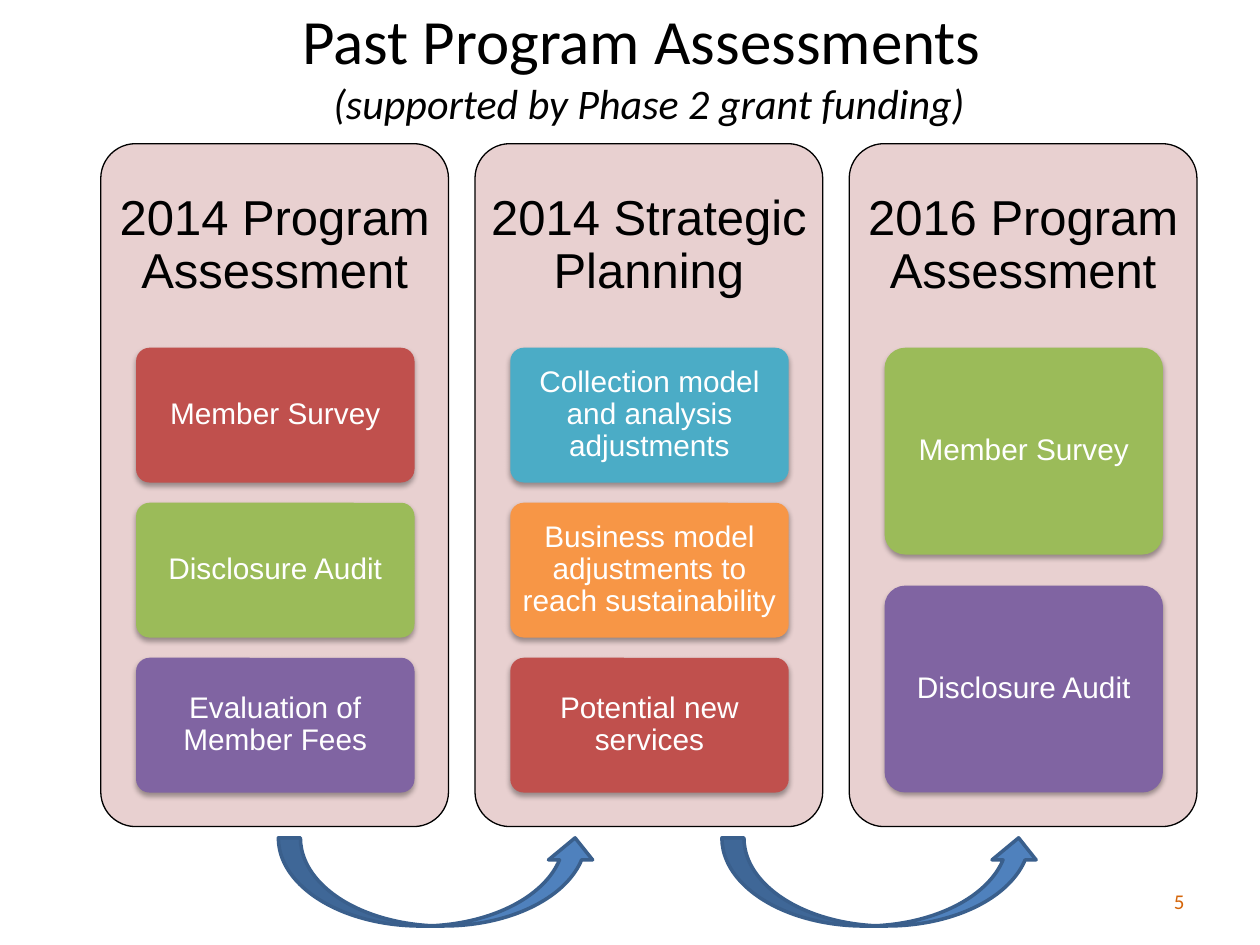
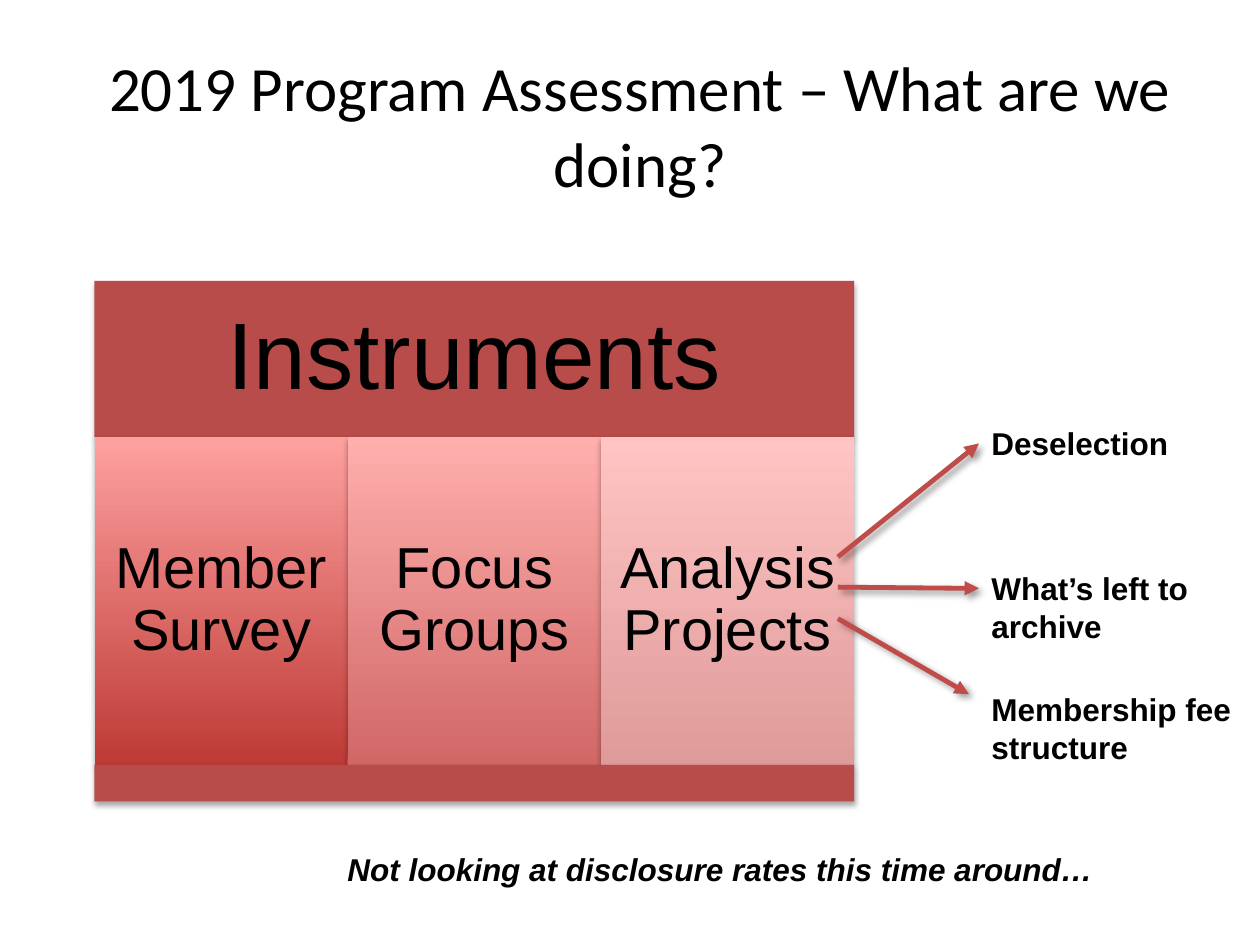
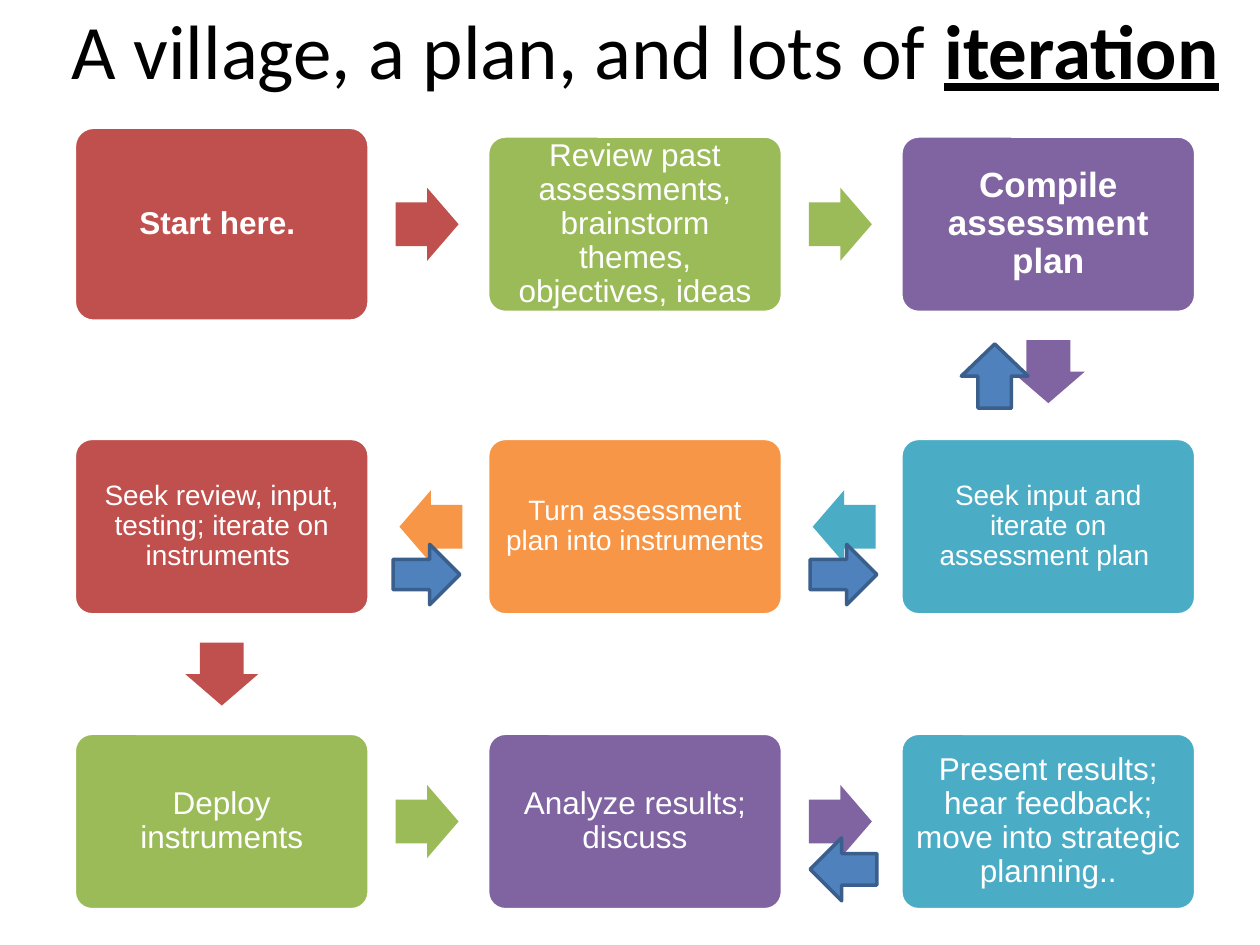
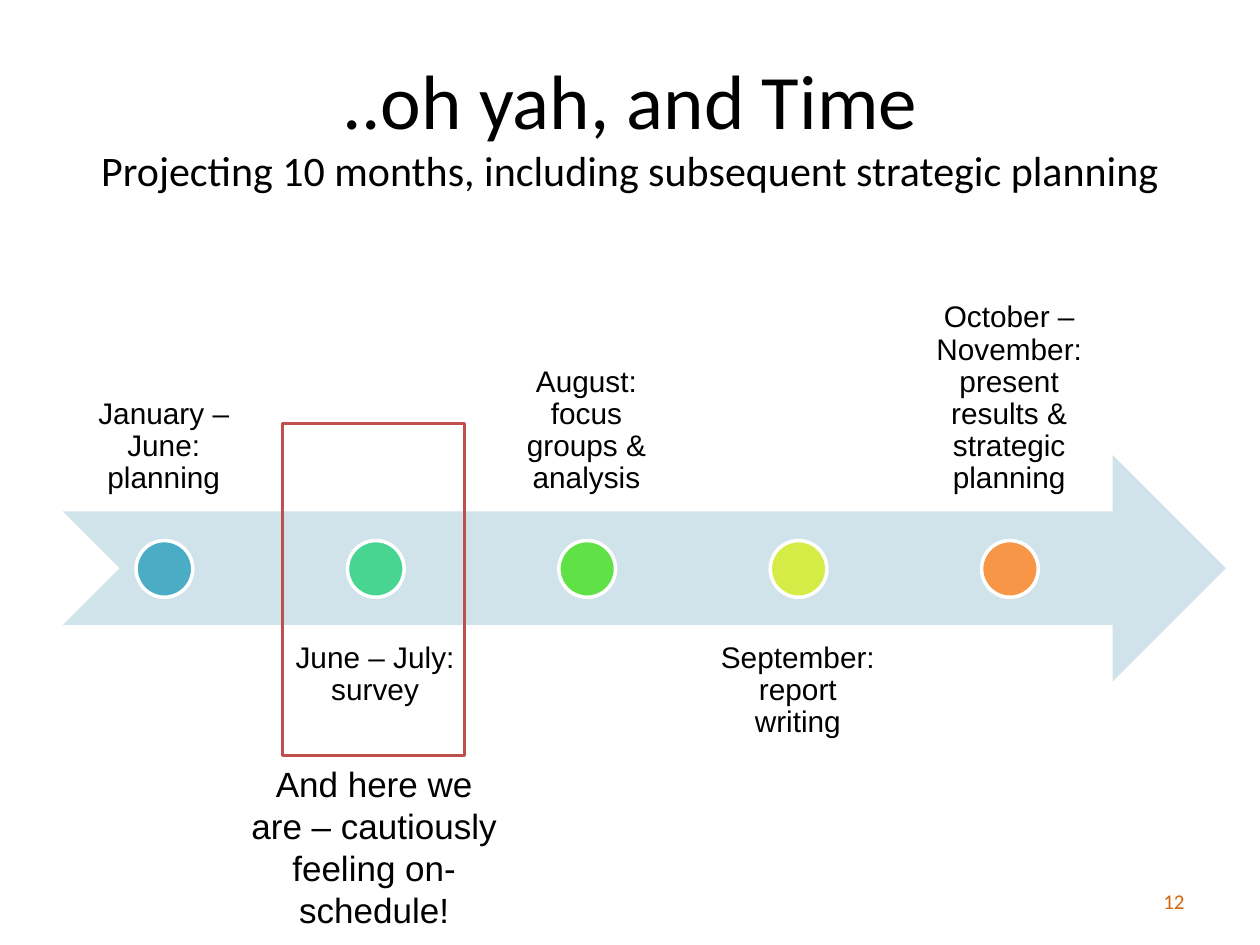
from dataclasses import dataclass
from typing import Optional, Union

from lxml.etree import SubElement
from pptx import Presentation
from pptx.dml.color import RGBColor
from pptx.enum.shapes import MSO_CONNECTOR, MSO_SHAPE
from pptx.enum.text import MSO_ANCHOR, MSO_AUTO_SIZE, PP_ALIGN
from pptx.oxml.ns import qn
from pptx.util import Inches, Pt

# Shared look
RED, GREEN, PURPLE = "C0504D", "9BBB59", "8064A2"
TEAL, ORANGE, BLUE, NAVY = "4BACC6", "F79646", "4F81BD", "3A5F8C"
BLACK, WHITE, PAGE_ORANGE = "000000", "FFFFFF", "D56509"
PINK, BRICK, ARROW_RED, PALE_BLUE = "E8D0D0", "B74C4A", "BF4C48", "D0E3EA"
BODY_FONT, TITLE_FONT = "Arial", "Calibri"

Area = tuple[float, float, float, float]


@dataclass
class Span:
    """A run of text; a final newline makes a line break."""
    text: str
    size: Optional[float] = None
    bold: bool = False
    italic: bool = False
    underline: bool = False


@dataclass
class Shadow:
    alpha: int
    blur: float
    distance: float
    angle: int


@dataclass
class Panel:
    heading: str
    cards: list[tuple[str, str]]


@dataclass
class Instrument:
    name: str
    bottom: str
    top: str


@dataclass
class Pointer:
    end: tuple[float, float]
    start_y: float
    label: str
    label_at: Area
    wrap: bool = True


@dataclass
class Step:
    text: str
    column: int
    row: int
    color: str
    direction: str = ""
    size: float = 18
    bold: bool = False
    extra: float = 0


@dataclass
class Milestone:
    text: str
    color: str


CARD_SHADOW = Shadow(35, 3.1, 1.8, 90)
LINE_SHADOW = Shadow(40, 4, 3, 45)


# Drawing tools
def rgb(color: str) -> RGBColor:
    return RGBColor.from_string(color)


def lengths(area: Area) -> list:
    return [Inches(value) for value in area]


def write(frame, text: Union[str, list[list[Span]]], *, size: float = 18,
          font: str = BODY_FONT, color: str = BLACK, bold: bool = False,
          italic: bool = False, align=PP_ALIGN.CENTER, anchor=MSO_ANCHOR.MIDDLE,
          inset: Optional[float] = None, spacing: Optional[float] = 0.9,
          wrap: bool = True) -> None:
    frame.word_wrap = wrap
    frame.auto_size = MSO_AUTO_SIZE.NONE
    frame.vertical_anchor = anchor
    if inset is not None:
        frame.margin_left = frame.margin_right = Inches(inset)
        frame.margin_top = frame.margin_bottom = Inches(inset)
    lines = [[Span(text, bold=bold, italic=italic)]] if isinstance(text, str) else text
    for index, spans in enumerate(lines):
        para = frame.add_paragraph() if index else frame.paragraphs[0]
        para.alignment = align
        para.line_spacing = spacing
        for span in spans:
            run = para.add_run()
            run.text = span.text.rstrip("\n")
            run.font.name = font
            run.font.size = Pt(span.size or size)
            run.font.bold, run.font.italic = span.bold, span.italic
            run.font.underline = span.underline
            run.font.color.rgb = rgb(color)
            if span.text.endswith("\n"):
                para.add_line_break()


def add_text(slide, area: Area, text, **text_format) -> None:
    box = slide.shapes.add_textbox(*lengths(area))
    write(box.text_frame, text, **text_format)


def cast_shadow(item, shadow: Optional[Shadow]) -> None:
    properties = item._element.spPr
    effects = properties.find(qn("a:effectLst"))
    if effects is None:
        effects = SubElement(properties, qn("a:effectLst"))
    if shadow is None:
        return
    outer = SubElement(effects, qn("a:outerShdw"), blurRad=str(Pt(shadow.blur)),
                       dist=str(Pt(shadow.distance)), dir=str(shadow.angle * 60000),
                       rotWithShape="0")
    tint = SubElement(outer, qn("a:srgbClr"), val=BLACK)
    SubElement(tint, qn("a:alpha"), val=str(shadow.alpha * 1000))


def add_shape(slide, kind, area: Area, fill: Union[str, tuple[str, str], None], *,
              line: Optional[str] = None, width: float = 2,
              adjustments: tuple[float, ...] = (), shadow: Optional[Shadow] = None,
              rotation: float = 0):
    shape = slide.shapes.add_shape(kind, *lengths(area))
    shape.shadow.inherit = False
    shape.rotation = rotation
    for index, value in enumerate(adjustments):
        shape.adjustments[index] = value
    if fill is None:
        shape.fill.background()
    elif isinstance(fill, tuple):
        shape.fill.gradient()
        shape.fill.gradient_angle = 90
        for stop, color in zip(shape.fill.gradient_stops, fill):
            stop.color.rgb = rgb(color)
    else:
        shape.fill.solid()
        shape.fill.fore_color.rgb = rgb(fill)
    if line:
        shape.line.color.rgb = rgb(line)
        shape.line.width = Pt(width)
    else:
        shape.line.fill.background()
    cast_shadow(shape, shadow)
    return shape


def add_round_box(slide, area: Area, fill: str, **shape_format):
    return add_shape(slide, MSO_SHAPE.ROUNDED_RECTANGLE, area, fill,
                     adjustments=(0.1,), **shape_format)


def add_blue_arrow(slide, kind, area: Area) -> None:
    add_shape(slide, kind, area, BLUE, line=NAVY)


def add_pointer_line(slide, start: tuple[float, float], end: tuple[float, float]) -> None:
    connector = slide.shapes.add_connector(MSO_CONNECTOR.STRAIGHT, *lengths(start + end))
    connector.line.color.rgb = rgb(ARROW_RED)
    connector.line.width = Pt(2.75)
    SubElement(connector._element.spPr.find(qn("a:ln")), qn("a:tailEnd"), type="triangle")
    cast_shadow(connector, LINE_SHADOW)


def add_titled_slide(deck, area: Area, title, size: float, page: str = ""):
    slide = deck.slides.add_slide(deck.slide_layouts[5])
    holder = slide.shapes.title
    holder.left, holder.top, holder.width, holder.height = lengths(area)
    write(holder.text_frame, title, size=size, font=TITLE_FONT, spacing=None)
    if page:
        add_text(slide, (7.17, 6.95, 2.33, 0.4), page, size=12, font=TITLE_FONT,
                 color=PAGE_ORANGE, align=PP_ALIGN.RIGHT, spacing=None)
    return slide


# Slide 1: past assessments
def build_past_assessments(deck) -> None:
    slide = add_titled_slide(deck, (0.65, -0.11, 9, 1.25), [
        [Span("Past Program Assessments ")],
        [Span("(supported by Phase 2 grant funding)", size=24, italic=True)],
    ], 36, page="5")
    panels = [
        Panel("2014 Program Assessment", [
            ("Member Survey", RED), ("Disclosure Audit", GREEN),
            ("Evaluation of Member Fees", PURPLE)]),
        Panel("2014 Strategic Planning", [
            ("Collection model and analysis adjustments", TEAL),
            ("Business model adjustments to reach sustainability", ORANGE),
            ("Potential new services", RED)]),
        Panel("2016 Program Assessment", [
            ("Member Survey", GREEN), ("Disclosure Audit", PURPLE)]),
    ]
    cards_top, cards_height, gap_share = 2.76, 3.53, 0.15
    for column, panel in enumerate(panels):
        left = 0.8 + 2.97 * column
        add_round_box(slide, (left, 1.14, 2.76, 5.42), PINK, line=BLACK, width=0.75)
        add_text(slide, (left, 1.14, 2.76, 1.63), panel.heading, size=28, inset=0.12)
        count = len(panel.cards)
        height = cards_height / (count + gap_share * (count - 1))
        for row, (text, color) in enumerate(panel.cards):
            top = cards_top + row * height * (1 + gap_share)
            card = add_round_box(slide, (left + 0.28, top, 2.21, height), color,
                                 shadow=CARD_SHADOW)
            write(card.text_frame, text, size=17, color=WHITE, inset=0.05)
    for left in (2.21, 5.73):
        add_blue_arrow(slide, MSO_SHAPE.CURVED_UP_ARROW, (left, 6.65, 2.53, 0.7))


# Slide 2: instruments
def build_instruments(deck) -> None:
    slide = add_titled_slide(deck, (0.58, 0.36, 9, 1.25),
                             "2019 Program Assessment – What are we doing?", 36)
    left, width = 0.75, 6.03
    header = add_shape(slide, MSO_SHAPE.RECTANGLE, (left, 2.23, width, 1.24), BRICK,
                       shadow=CARD_SHADOW)
    write(header.text_frame, "Instruments", size=54, inset=0.23)
    instruments = [
        Instrument("Member Survey", "BE3A36", "FDA19F"),
        Instrument("Focus Groups", "D06866", "FFAFAE"),
        Instrument("Analysis Projects", "DE9B9A", "FFC4C3"),
    ]
    column_width = width / len(instruments)
    for column, instrument in enumerate(instruments):
        box = add_shape(slide, MSO_SHAPE.RECTANGLE,
                        (left + column * column_width, 3.47, column_width, 2.6),
                        (instrument.bottom, instrument.top), shadow=CARD_SHADOW)
        write(box.text_frame, instrument.name, size=33, inset=0.14)
    add_shape(slide, MSO_SHAPE.RECTANGLE, (left, 6.07, width, 0.29), BRICK,
              shadow=CARD_SHADOW)

    # Projects pointed at from the last column
    note_format = dict(bold=True, align=PP_ALIGN.LEFT, anchor=MSO_ANCHOR.TOP, spacing=None)
    pointers = [
        Pointer((7.77, 3.52), 4.42, "Deselection", (7.77, 3.32, 1.62, 0.4), wrap=False),
        Pointer((7.77, 4.67), 4.66, "What’s left to archive", (7.77, 4.47, 1.99, 0.71)),
        Pointer((7.69, 5.51), 4.91, "Membership fee structure", (7.77, 5.43, 2.23, 0.71)),
    ]
    for pointer in pointers:
        add_pointer_line(slide, (6.65, pointer.start_y), pointer.end)
        add_text(slide, pointer.label_at, pointer.label, wrap=pointer.wrap, **note_format)
    add_text(slide, (2.66, 6.7, 6.2, 0.4),
             "Not looking at disclosure rates this time around…",
             italic=True, wrap=False, **note_format)


# Slide 3: iteration flow
def build_iteration(deck) -> None:
    slide = add_titled_slide(deck, (0.24, 0.09, 9.76, 0.59), [[
        Span("A village, a plan, and lots of "),
        Span("iteration", bold=True, underline=True),
    ]], 44)
    steps = [
        Step("Start here. ", 0, 0, RED, "right", bold=True, extra=0.07),
        Step("Review past assessments, brainstorm themes, objectives, ideas",
             1, 0, GREEN, "right"),
        Step("Compile assessment plan", 2, 0, PURPLE, "down", size=20, bold=True),
        Step("Seek input and iterate on assessment plan ", 2, 1, TEAL, "left", size=16),
        Step("Turn assessment plan into instruments", 1, 1, ORANGE, "left", size=16),
        Step("Seek review, input, testing; iterate on instruments ",
             0, 1, RED, "down", size=16),
        Step("Deploy instruments", 0, 2, GREEN, "right"),
        Step("Analyze results; discuss", 1, 2, PURPLE, "right"),
        Step("Present results; hear feedback; move into strategic planning..", 2, 2, TEAL),
    ]
    width, height = 2.34, 1.4
    row_tops = (1.08, 3.48, 5.82)
    arrows = {  # offset from the box corner, then rotation
        "right": (2.55, 0.41, 0),
        "left": (-0.7, 0.41, 180),
        "down": (0.92, 1.58, 90),
    }
    for step in steps:
        left, top = 0.59 + 3.28 * step.column, row_tops[step.row]
        box = add_round_box(slide, (left, top - step.extra, width, height + 2 * step.extra),
                            step.color, line=WHITE)
        write(box.text_frame, step.text, size=step.size, bold=step.bold,
              color=WHITE, inset=0.07)
        if step.direction:
            across, down, rotation = arrows[step.direction]
            add_shape(slide, MSO_SHAPE.RIGHT_ARROW, (left + across, top + down, 0.5, 0.58),
                      step.color, adjustments=(0.6, 0.5), rotation=rotation)

    # Arrows back to earlier steps
    add_blue_arrow(slide, MSO_SHAPE.UP_ARROW, (7.63, 2.73, 0.53, 0.51))
    for left in (6.43, 3.12):
        add_blue_arrow(slide, MSO_SHAPE.RIGHT_ARROW, (left, 4.32, 0.53, 0.48))
    add_blue_arrow(slide, MSO_SHAPE.LEFT_ARROW, (6.43, 6.65, 0.53, 0.5))


# Slide 4: timeline
def build_timeline(deck) -> None:
    slide = add_titled_slide(deck, (0.5, 0.61, 9, 0.74), [[
        Span("..oh yah, and Time\n"),
        Span("Projecting 10 months, including subsequent strategic planning", size=24),
    ]], 44, page="12")
    add_shape(slide, MSO_SHAPE.NOTCHED_RIGHT_ARROW, (0.5, 3.61, 9.23, 1.8), PALE_BLUE)
    milestones = [
        Milestone("January – June: planning", TEAL),
        Milestone("June – July: survey", "48D491"),
        Milestone("August: focus groups & analysis", "60E146"),
        Milestone("September: report writing", "D5EC46"),
        Milestone("October – November: present results & strategic planning", ORANGE),
    ]
    step = 6.71 / (len(milestones) - 1)
    for index, milestone in enumerate(milestones):
        left = 0.5 + index * step
        below = index % 2 == 1
        add_text(slide, (left, 4.97 if below else 2.26, 1.6, 1.8), milestone.text,
                 size=17, inset=0.13,
                 anchor=MSO_ANCHOR.TOP if below else MSO_ANCHOR.BOTTOM)
        add_shape(slide, MSO_SHAPE.OVAL, (left + 0.58, 4.29, 0.45, 0.45),
                  milestone.color, line=WHITE)
    # Where the project stands now
    add_shape(slide, MSO_SHAPE.RECTANGLE, (2.24, 3.36, 1.45, 2.64), None,
              line=RED, width=1.75)
    add_text(slide, (1.88, 6, 2.18, 1.45),
             "And here we are – cautiously feeling on-schedule!",
             size=20, anchor=MSO_ANCHOR.TOP, spacing=None)


def main() -> None:
    deck = Presentation()
    deck.slide_width, deck.slide_height = Inches(10), Inches(7.5)
    build_past_assessments(deck)
    build_instruments(deck)
    build_iteration(deck)
    build_timeline(deck)
    deck.save("out.pptx")


if __name__ == "__main__":
    main()
